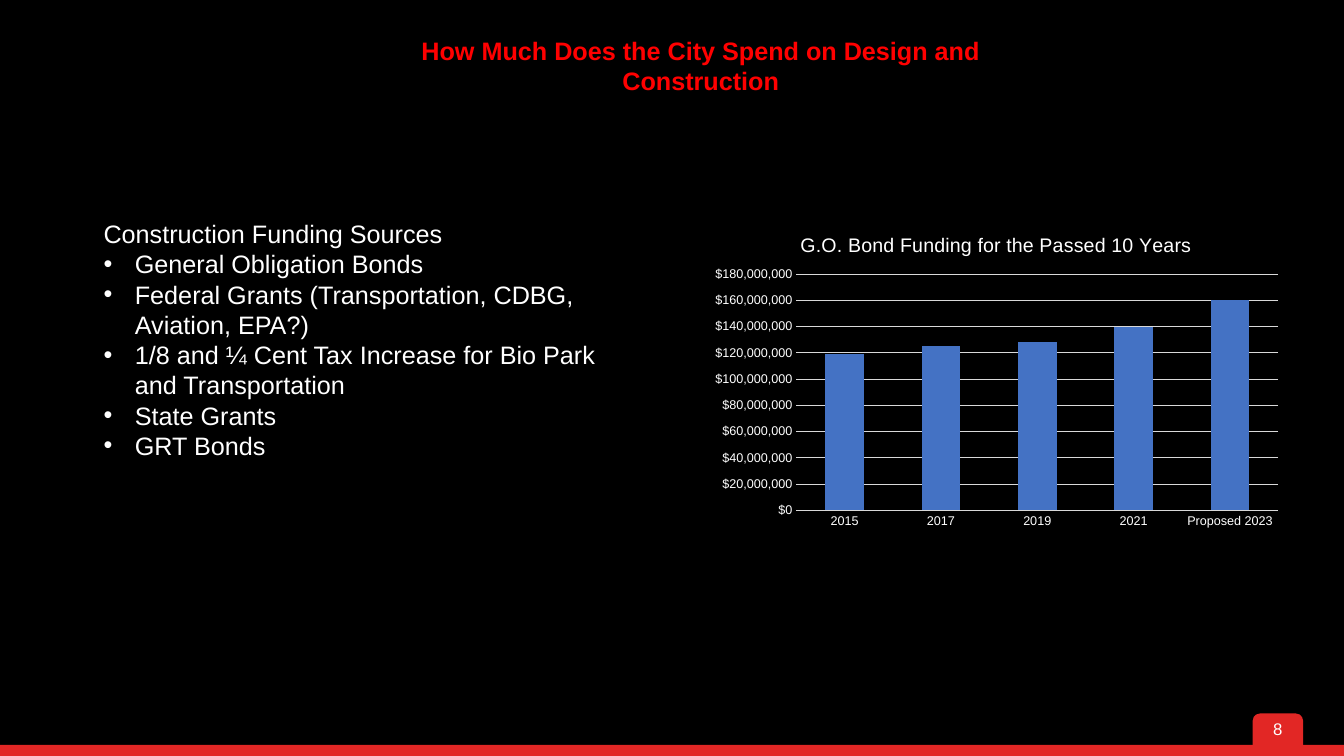
from dataclasses import dataclass

from lxml import etree
from pptx import Presentation
from pptx import util as u
from pptx.chart.data import CategoryChartData
from pptx.dml.color import RGBColor
from pptx.enum import chart as charts, shapes, text
from pptx.oxml import parse_xml
from pptx.oxml.ns import nsdecls, qn


@dataclass(frozen=True)
class Theme:
    """Colours, font and type sizes of the deck."""
    font: str = "Arial"
    back: str = "000000"
    ink: str = "FFFFFF"
    title: str = "FF0000"
    band: str = "E22725"
    bar: str = "4472C4"
    grid: str = "D9D9D9"
    body_size: float = 18
    chart_title_size: float = 14
    page_size: float = 12
    axis_size: float = 9


def set_font(font, theme, size, color=None, bold=False):
    """Apply the theme font with a size, colour and weight."""
    font.name, font.size, font.bold = theme.font, u.Pt(size), bold
    font.color.rgb = RGBColor.from_string(color or theme.ink)


def write(p, words, bullet=False, align=text.PP_ALIGN.LEFT, **style):
    """Put formatted words into a paragraph, optionally bulleted."""
    p.alignment = align
    if bullet:
        pPr = p._p.get_or_add_pPr()
        pPr.set("marL", str(u.Cm(0.79)))
        pPr.set("indent", str(-u.Cm(0.79)))
        etree.SubElement(pPr, qn("a:buFont")).set("typeface", "Arial")
        etree.SubElement(pPr, qn("a:buChar")).set("char", "•")
    r = p.add_run()
    r.text = words
    set_font(r.font, **style)


class SlideBuilder:
    """Draws themed elements on one slide."""

    def __init__(self, prs, theme):
        self.theme = theme
        self.s = prs.slides.add_slide(prs.slide_layouts[6])
        fill = self.s.background.fill
        fill.solid()
        fill.fore_color.rgb = RGBColor.from_string(theme.back)

    def shape(self, kind, box, color):
        """Add a plain filled shape."""
        sp = self.s.shapes.add_shape(kind, *map(u.Cm, box))
        sp.shadow.inherit = False
        sp.fill.solid()
        sp.fill.fore_color.rgb = RGBColor.from_string(color)
        sp.line.fill.background()
        return sp

    def text(self, box, lines, size, anchor=text.MSO_ANCHOR.TOP, **style):
        """Add a text box of (words, bullet) lines."""
        tf = self.s.shapes.add_textbox(*map(u.Cm, box)).text_frame
        tf.word_wrap = True
        tf.auto_size = text.MSO_AUTO_SIZE.SHAPE_TO_FIT_TEXT
        tf.vertical_anchor = anchor
        for i, (words, bullet) in enumerate(lines):
            p = tf.add_paragraph() if i else tf.paragraphs[0]
            write(p, words, bullet, theme=self.theme, size=size, **style)

    def columns(self, box, title, values, plot):
        """Add a stacked column chart with its plot area at given fractions."""
        t = self.theme
        data = CategoryChartData(number_format='"$"#,##0')
        data.categories = list(values)
        data.add_series("Series 1", list(values.values()))
        chart = self.s.shapes.add_chart(
            charts.XL_CHART_TYPE.COLUMN_STACKED, *map(u.Cm, box), data).chart
        set_font(chart.font, t, t.axis_size)
        chart.has_legend = False
        chart.has_title = True
        write(chart.chart_title.text_frame.paragraphs[0], title, theme=t,
              size=t.chart_title_size, align=text.PP_ALIGN.CENTER)
        bars = chart.plots[0]
        bars.gap_width, bars.overlap, bars.vary_by_categories = 150, 100, False
        fill = bars.series[0].format.fill
        fill.solid()
        fill.fore_color.rgb = RGBColor.from_string(t.bar)
        cat, val = chart.category_axis, chart.value_axis
        for axis in (cat, val):
            axis.major_tick_mark = axis.minor_tick_mark = charts.XL_TICK_MARK.NONE
            set_font(axis.tick_labels.font, t, t.axis_size)
        val.minimum_scale, val.maximum_scale, val.major_unit = 0, 180e6, 20e6
        val.format.line.fill.background()
        for line in (cat.format.line, val.major_gridlines.format.line):
            line.color.rgb = RGBColor.from_string(t.grid)
            line.width = u.Pt(0.75)
        edges = "".join(f'<c:{k} val="{v}"/>' for k, v in zip("xywh", plot))
        area = chart._chartSpace.chart.plotArea
        for old in area.findall(qn("c:layout")):
            area.remove(old)
        area.insert(0, parse_xml(
            f'<c:layout {nsdecls("c")}><c:manualLayout>'
            '<c:layoutTarget val="inner"/><c:xMode val="edge"/><c:yMode val="edge"/>'
            f'{edges}</c:manualLayout></c:layout>'))


def main():
    """Build the funding slide."""
    prs = Presentation()
    prs.slide_width, prs.slide_height = u.Cm(33.87), u.Cm(19.05)
    theme = Theme()
    page = SlideBuilder(prs, theme)
    center = text.PP_ALIGN.CENTER

    tab = page.shape(shapes.MSO_SHAPE.ROUND_2_SAME_RECTANGLE,
                     (31.57, 17.98, 1.27, 0.79), theme.band)
    tab.adjustments[0] = 0.23
    page.text((31.52, 17.98, 1.37, 0.76), [("8", False)], theme.page_size,
              anchor=text.MSO_ANCHOR.MIDDLE, align=center)
    page.shape(shapes.MSO_SHAPE.RECTANGLE, (0, 18.77, 33.87, 0.28), theme.band)

    page.text((9.75, 0.76, 15.82, 1.8),
              [("How Much Does the City Spend on Design and Construction", False)],
              theme.body_size, align=center, color=theme.title, bold=True)
    page.columns((17.7, 5.46, 14.81, 8.05),
                 "G.O. Bond Funding for the Passed 10 Years",
                 {"2015": 119000000, "2017": 125000000, "2019": 128000000,
                  "2021": 140000000, "Proposed 2023": 160000000},
                 plot=(0.16, 0.18, 0.82, 0.74))
    sources = ["General Obligation Bonds",
               "Federal Grants (Transportation, CDBG, Aviation, EPA?)",
               "1/8 and ¼ Cent Tax Increase for Bio Park and Transportation",
               "State Grants",
               "GRT Bonds"]
    page.text((2.36, 5.38, 13.79, 7.19),
              [("Construction Funding Sources", False)] + [(x, True) for x in sources],
              theme.body_size)
    prs.save("out.pptx")


if __name__ == "__main__":
    main()
